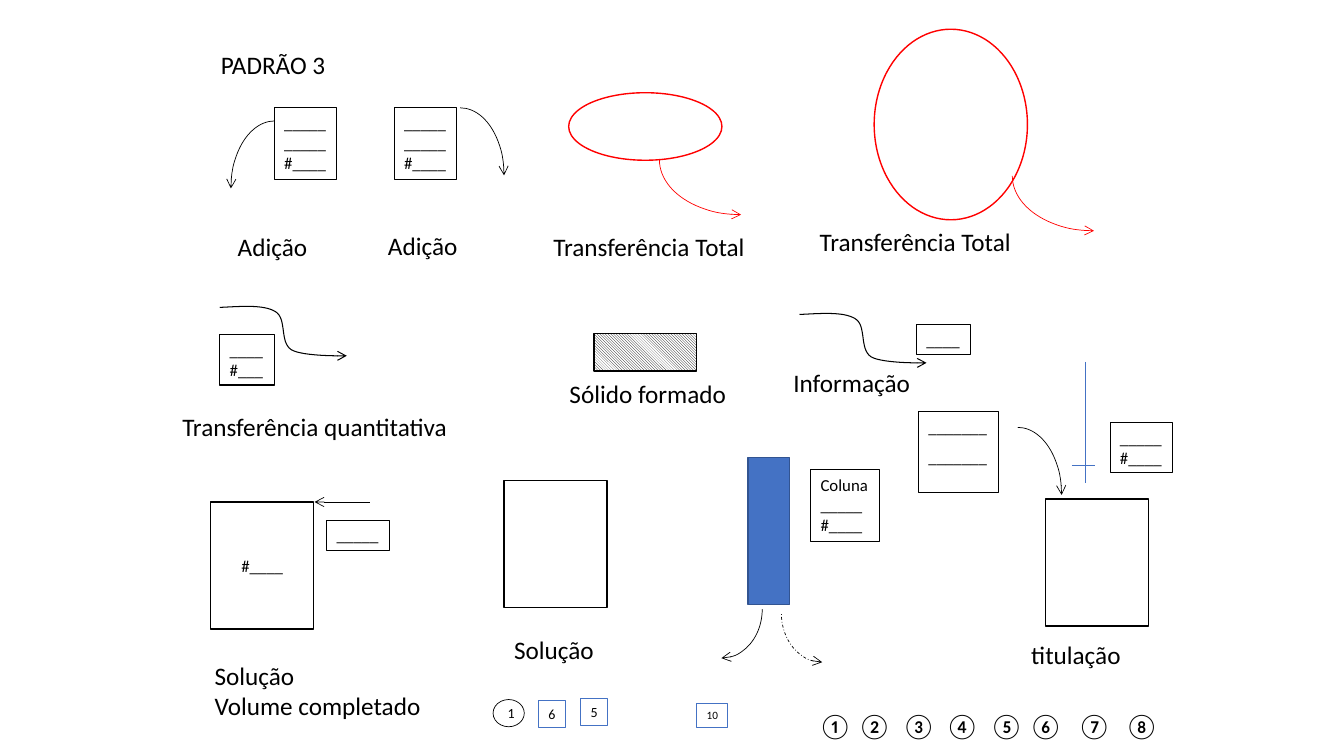
from lxml.etree import SubElement
from pptx import Presentation
from pptx.dml.color import RGBColor
from pptx.enum.dml import MSO_LINE, MSO_PATTERN
from pptx.enum.shapes import MSO_CONNECTOR, MSO_SHAPE
from pptx.enum.text import MSO_ANCHOR, MSO_AUTO_SIZE, PP_ALIGN
from pptx.oxml.ns import qn
from pptx.util import Inches, Pt

COLORS = {"ink": "000000", "paper": "FFFFFF", "transfer": "FF0000",
          "column": "4472C4", "column_edge": "325491"}
FONT = "Calibri"
BLANK = "_____"
AMOUNT = "#____"


def color(name):
    return RGBColor.from_string(COLORS[name])


def place(*lengths):
    return [Inches(length) for length in lengths]


def stroke(item, name, width):
    item.line.color.rgb = color(name)
    item.line.width = Pt(width)


def add_arrowhead(item, end):
    outline = item._element.spPr.find(qn("a:ln"))
    SubElement(outline, qn(f"a:{end}End"), type="arrow")


def write(frame, lines, size, align=PP_ALIGN.LEFT, anchor=MSO_ANCHOR.TOP):
    frame.text = "\n".join(lines)
    frame.vertical_anchor = anchor
    for paragraph in frame.paragraphs:
        paragraph.alignment = align
        paragraph.font.name = FONT
        paragraph.font.size = Pt(size)
        paragraph.font.color.rgb = color("ink")


def hug(frame):
    frame.word_wrap = False
    frame.auto_size = MSO_AUTO_SIZE.SHAPE_TO_FIT_TEXT


def add_outline(slide, kind, box, line="ink", width=1, fill=None):
    outline = slide.shapes.add_shape(kind, *place(*box))
    outline.shadow.inherit = False
    if fill:
        outline.fill.solid()
        outline.fill.fore_color.rgb = color(fill)
    else:
        outline.fill.background()
    stroke(outline, line, width)
    return outline


def add_tag(slide, box, lines, size=12, line="ink", fill=None):
    tag = add_outline(slide, MSO_SHAPE.RECTANGLE, box, line, 0.75, fill)
    write(tag.text_frame, lines, size)
    hug(tag.text_frame)
    return tag


def add_centered(slide, kind, box, text, size, width):
    vessel = add_outline(slide, kind, box, width=width)
    write(vessel.text_frame, [text], size, PP_ALIGN.CENTER, MSO_ANCHOR.MIDDLE)


def add_caption(slide, box, *lines):
    caption = slide.shapes.add_textbox(*place(*box))
    write(caption.text_frame, lines, 18)
    hug(caption.text_frame)


def add_arc(slide, box, flips="", end="tail", line="ink", dash=None):
    arc = add_outline(slide, MSO_SHAPE.ARC, box, line, 0.5)
    if dash:
        arc.line.dash_style = dash
    frame = arc._element.spPr.find(qn("a:xfrm"))
    for axis in flips:
        frame.set(f"flip{axis}", "1")
    add_arrowhead(arc, end)


def add_segment(slide, start, finish, line):
    segment = slide.shapes.add_connector(
        MSO_CONNECTOR.STRAIGHT, *place(*start, *finish))
    stroke(segment, line, 0.5)
    SubElement(segment._element.spPr, qn("a:effectLst"))
    return segment


def bezier(points, t):
    weights = ((1 - t) ** 3, 3 * t * (1 - t) ** 2, 3 * t ** 2 * (1 - t), t ** 3)
    return tuple(Inches(sum(w * p[axis] for w, p in zip(weights, points)))
                 for axis in (0, 1))


def add_wave(slide, left, top):
    knots = [(0, 0.01), (0.21, 0), (0.43, -0.02), (0.55, 0.05),
             (0.67, 0.12), (0.59, 0.35), (0.71, 0.43),
             (0.83, 0.5), (1.26, 0.49), (1.26, 0.49)]
    knots = [(left + x, top + y) for x, y in knots]
    steps = 16
    trail = [bezier(knots[first:first + 4], step / steps)
             for first in (0, 3, 6) for step in range(1, steps + 1)]
    builder = slide.shapes.build_freeform(*bezier(knots[:4], 0))
    builder.add_line_segments(trail, close=False)
    wave = builder.convert_to_shape()
    wave.shadow.inherit = False
    wave.fill.background()
    stroke(wave, "ink", 0.75)
    add_arrowhead(wave, "tail")


def add_heading(slide):
    heading = slide.shapes.title
    heading.left, heading.top, heading.width, heading.height = place(
        2.09, 0.44, 1.25, 0.4)
    write(heading.text_frame, ["PADRÃO 3"], 18)
    hug(heading.text_frame)


def add_additions(slide):
    add_arc(slide, (4.13, 1.07, 0.87, 1.34))
    add_arc(slide, (2.29, 1.2, 0.87, 1.34), "H")
    for tag_left, caption_left, caption_top in ((3.91, 3.75, 2.24), (2.72, 2.26, 2.25)):
        add_tag(slide, (tag_left, 1.07, 0.62, 0.71), [BLANK, BLANK, AMOUNT])
        add_caption(slide, (caption_left, caption_top, 0.96, 0.4), "Adição")


def add_transfers(slide):
    for ellipse, arc, caption in (
            ((5.64, 0.92, 1.52, 0.67), (6.54, 1.04), (5.39, 2.25)),
            ((8.67, 0.29, 1.52, 1.89), (10.04, 1.2), (8.03, 2.2))):
        add_outline(slide, MSO_SHAPE.OVAL, ellipse, "transfer")
        add_arc(slide, (*arc, 1.62, 1.09), "HV", "head", "transfer")
        add_caption(slide, (*caption, 2.12, 0.4), "Transferência Total")
    add_wave(slide, 2.18, 3.04)
    add_tag(slide, (2.18, 3.32, 0.54, 0.5), ["____", "#___"])
    add_caption(slide, (1.71, 4.03, 2.86, 0.4), "Transferência quantitativa")


def add_solid_and_information(slide):
    solid = add_outline(slide, MSO_SHAPE.RECTANGLE, (5.89, 3.31, 1.02, 0.37))
    solid.fill.patterned()
    solid.fill.pattern = MSO_PATTERN.LIGHT_DOWNWARD_DIAGONAL
    solid.fill.fore_color.rgb = color("ink")
    solid.fill.back_color.rgb = color("paper")
    add_caption(slide, (5.55, 3.7, 1.77, 0.4), "Sólido formado")
    add_wave(slide, 7.93, 3.11)
    add_tag(slide, (9.09, 3.22, 0.54, 0.3), ["____"])
    add_caption(slide, (7.77, 3.59, 1.37, 0.4), "Informação")


def add_solutions(slide):
    add_centered(slide, MSO_SHAPE.RECTANGLE, (2.09, 4.98, 1.02, 1.26), AMOUNT, 12, 1)
    filling = add_segment(slide, (3.67, 4.98), (3.12, 4.98), "ink")
    add_arrowhead(filling, "tail")
    add_tag(slide, (3.24, 5.16, 0.62, 0.3), [BLANK])
    add_caption(slide, (2.03, 6.5, 2.27, 0.71), "Solução", "Volume completado")
    add_outline(slide, MSO_SHAPE.RECTANGLE, (5, 4.77, 1.02, 1.26))
    add_caption(slide, (5, 6.24, 1.06, 0.4), "Solução")


def add_column(slide):
    add_outline(slide, MSO_SHAPE.RECTANGLE, (7.42, 4.54, 0.41, 1.46),
                "column_edge", fill="column")
    add_arc(slide, (6.75, 5.56, 0.81, 0.97), "V", "head")
    add_arc(slide, (7.75, 5.6, 0.81, 0.97), "HV", "head", dash=MSO_LINE.DASH_DOT)
    add_tag(slide, (8.04, 4.66, 0.68, 0.71), ["Coluna", BLANK, AMOUNT])


def add_titration(slide):
    add_segment(slide, (10.76, 3.59), (10.76, 4.79), "column")
    add_segment(slide, (10.63, 4.62), (10.86, 4.62), "column")
    add_tag(slide, (11.01, 4.19, 0.62, 0.5), [BLANK, AMOUNT])
    add_outline(slide, MSO_SHAPE.RECTANGLE, (10.37, 4.95, 1.02, 1.26))
    add_arc(slide, (9.66, 4.24, 0.87, 1.34))
    reagent = add_tag(slide, (9.11, 4.08, 0.79, 0.81), ["_______", "_______"])
    reagent.text_frame.paragraphs[1].line_spacing = 1.5
    add_caption(slide, (10.13, 6.29, 1.1, 0.4), "titulação")


def add_numbers(slide):
    lefts = (8.02, 8.41, 8.85, 9.28, 9.72, 10.11, 10.59, 11.06)
    for left, number in zip(lefts, "①②③④⑤⑥⑦⑧"):
        add_caption(slide, (left, 7, 0.43, 0.4), number)
    add_centered(slide, MSO_SHAPE.OVAL, (4.89, 6.94, 0.31, 0.27), "1", 10, 0.5)
    add_tag(slide, (5.34, 6.95, 0.27, 0.27), ["6"], 10, "column", "paper")
    add_tag(slide, (5.76, 6.93, 0.27, 0.27), ["5"], 10, "column", "paper")
    add_tag(slide, (6.91, 6.98, 0.31, 0.24), ["10"], 8, "column")


def main():
    deck = Presentation()
    deck.slide_width, deck.slide_height = place(13.33, 7.5)
    slide = deck.slides.add_slide(deck.slide_layouts[5])
    for add_part in (add_heading, add_additions, add_transfers,
                     add_solid_and_information, add_solutions, add_column,
                     add_titration, add_numbers):
        add_part(slide)
    deck.save("out.pptx")


if __name__ == "__main__":
    main()
